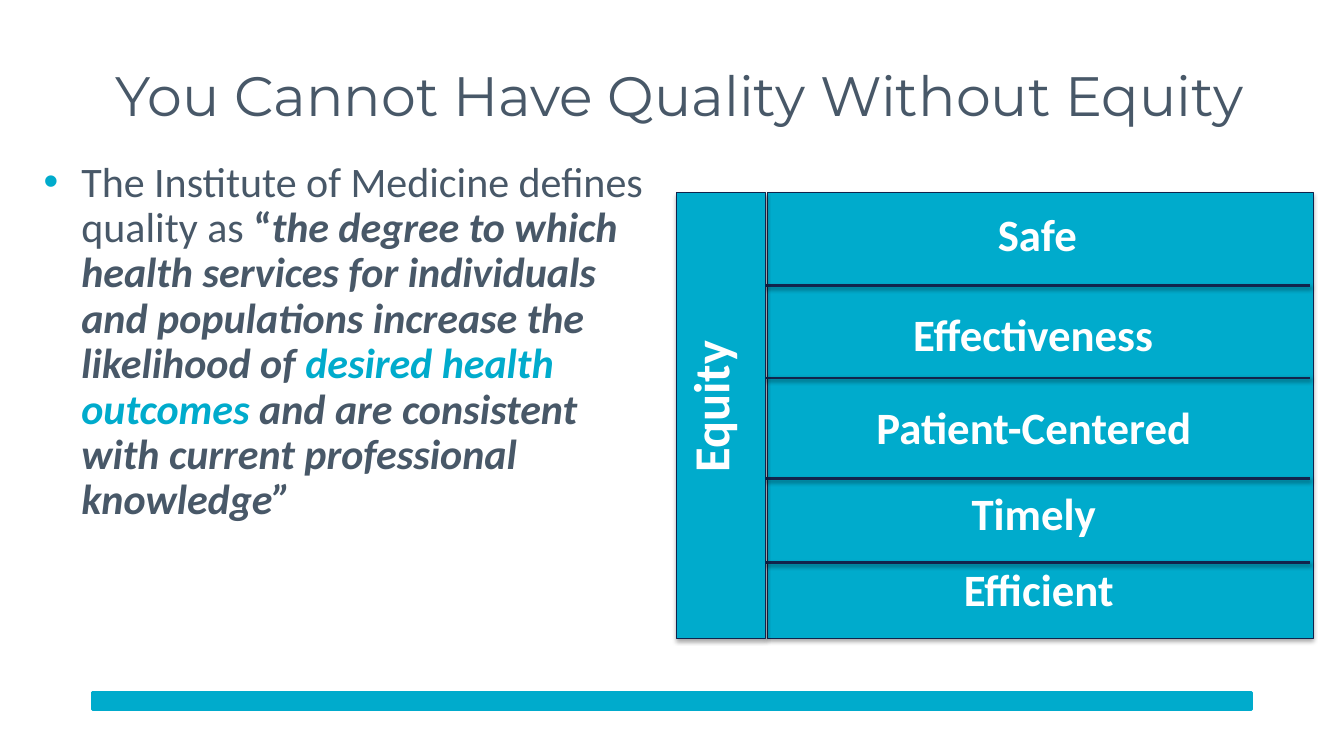
from lxml import etree
from pptx import Presentation
from pptx.dml.color import RGBColor
from pptx.enum import shapes, text
from pptx.oxml import ns
from pptx.util import Pt

TEAL, NAVY, SLATE, WHITE = "00ABCC", "10234C", "485868", "FFFFFF"


def rgb(value):
    return RGBColor.from_string(value)


def add_xml(parent, tag, **attributes):
    return etree.SubElement(parent, ns.qn(tag), attributes)


def add_run(paragraph, wording, size=32, font="Calibri", color=SLATE, bold=False, italic=False):
    run = paragraph.add_run()
    run.text = wording
    run.font.name, run.font.size = font, Pt(size)
    run.font.bold, run.font.italic = bold, italic
    run.font.color.rgb = rgb(color)


def cast_shadow(effects, opacity, distance):
    """Put a soft downward shadow into an effect list."""
    shadow = add_xml(effects, "a:outerShdw", blurRad=str(Pt(3.1)), dist=str(Pt(distance)),
                     dir="5400000", rotWithShape="0")
    black = add_xml(shadow, "a:srgbClr", val="000000")
    add_xml(black, "a:alpha", val=str(opacity * 1000))


class QualitySlide:
    def __init__(self, deck):
        self.slide = deck.slides.add_slide(deck.slide_layouts[5])
        self.shapes = self.slide.shapes

    def title(self, wording, left, top, width, height):
        title = self.shapes.title
        title.left, title.top, title.width, title.height = map(Pt, (left, top, width, height))
        frame = title.text_frame
        frame.auto_size = text.MSO_AUTO_SIZE.NONE
        frame.vertical_anchor = text.MSO_ANCHOR.MIDDLE
        frame.paragraphs[0].alignment = text.PP_ALIGN.CENTER
        add_run(frame.paragraphs[0], wording, size=39.6, font="Montserrat")

    def block(self, left, top, width, height, outline=NAVY, weight=0.75, shadow=True):
        block = self.shapes.add_shape(shapes.MSO_SHAPE.RECTANGLE, *map(Pt, (left, top, width, height)))
        block.fill.solid()
        block.fill.fore_color.rgb = rgb(TEAL)
        block.line.color.rgb = rgb(outline)
        block.line.width = Pt(weight)
        block.shadow.inherit = False
        if shadow:
            cast_shadow(block.element.spPr.find(ns.qn("a:effectLst")), 35, 1.8)

    def divider(self, left, right, y):
        divider = self.shapes.add_connector(shapes.MSO_CONNECTOR.STRAIGHT, *map(Pt, (left, y, right, y)))
        divider.line.color.rgb = rgb("12244C")
        divider.line.width = Pt(2)
        cast_shadow(add_xml(divider.element.spPr, "a:effectLst"), 38, 1.6)

    def text_box(self, left, top, width, height):
        box = self.shapes.add_textbox(*map(Pt, (left, top, width, height)))
        box.text_frame.word_wrap = True
        return box

    def label(self, wording, left, top, width, height, size=32, upward=False):
        box = self.text_box(left, top, width, height)
        box.text_frame.auto_size = text.MSO_AUTO_SIZE.SHAPE_TO_FIT_TEXT
        if upward:
            box.element.txBody.bodyPr.set("vert", "vert270")
        paragraph = box.text_frame.paragraphs[0]
        paragraph.alignment = text.PP_ALIGN.CENTER
        add_run(paragraph, wording, size=size, color=WHITE, bold=True)

    def bullet(self, parts, left, top, width, height):
        """Write one bulleted paragraph from (wording, format) pairs."""
        paragraph = self.text_box(left, top, width, height).text_frame.paragraphs[0]
        paragraph.line_spacing = 0.9
        properties = paragraph._p.get_or_add_pPr()
        properties.set("marL", str(Pt(27)))
        properties.set("indent", str(Pt(-27)))
        add_xml(add_xml(properties, "a:buClr"), "a:srgbClr", val=TEAL)
        add_xml(properties, "a:buFont", typeface="Arial")
        add_xml(properties, "a:buChar", char="•")
        for wording, style in parts:
            add_run(paragraph, wording, size=30, **style)


def main():
    deck = Presentation()
    deck.slide_width, deck.slide_height = Pt(960), Pt(540)
    page = QualitySlide(deck)

    page.block(66, 494.5, 828, 12.5, outline=TEAL, weight=2, shadow=False)
    page.title("You Cannot Have Quality Without Equity", 32.5, 22.5, 906, 90)

    quote = dict(bold=True, italic=True)
    definition = [
        ("The Institute of Medicine defines quality as ", {}),
        ("“", dict(bold=True)),
        ("the degree to which health services for individuals and populations "
         "increase the likelihood of ", quote),
        ("desired health outcomes ", dict(quote, color=TEAL)),
        ("and are consistent with current professional knowledge”", quote),
    ]
    page.bullet(definition, 24, 111.5, 453, 371)

    panel_top, panel_height = 137.5, 318.5
    page.block(548, panel_top, 390, panel_height)
    for y in (204, 270, 342, 402):
        page.divider(546, 936, y)
    dimensions = [
        ("Safe", 582, 144),
        ("Effectiveness", 579, 215.5),
        ("Patient-Centered", 579.5, 282),
        ("Timely", 579.5, 343.5),
        ("Efficient", 583, 398),
    ]
    for dimension, left, top in dimensions:
        page.label(dimension, left, top, 318, 46)

    page.block(483, panel_top, 64, panel_height)
    page.label("Equity", 481.5, 140.5, 58.5, 300, size=36, upward=True)

    deck.save("out.pptx")


if __name__ == "__main__":
    main()
